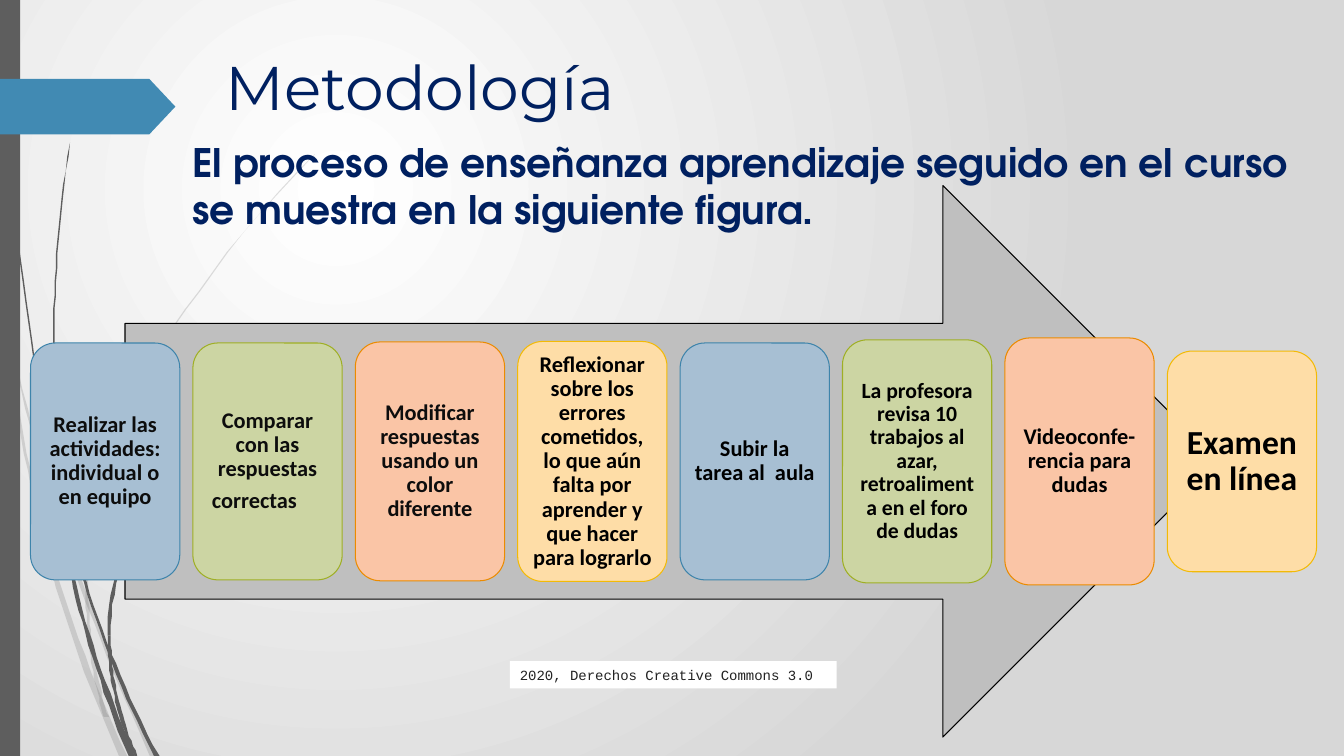
import pptx
import pptx.dml.color
import pptx.enum.shapes
import pptx.enum.text
import pptx.oxml
import pptx.oxml.ns
import pptx.util

Pt = pptx.util.Pt
qn = pptx.oxml.ns.qn
MSO_SHAPE = pptx.enum.shapes.MSO_SHAPE
PP_ALIGN = pptx.enum.text.PP_ALIGN
MIDDLE = pptx.enum.text.MSO_ANCHOR.MIDDLE
colour = pptx.dml.color.RGBColor.from_string
A_NAMESPACE = pptx.oxml.ns.nsdecls("a")
SLIDE_WIDTH, SLIDE_HEIGHT = 960, 540
NAVY, GREY, WHITE, BLACK, SOFT_BLACK = "002060", "5E5E5E", "FFFFFF", "000000", "0D0D0D"


def paint(shape, fill, outline=None):
    shape.shadow.inherit = False
    shape.fill.solid()
    shape.fill.fore_color.rgb = colour(fill)
    if outline:
        shape.line.color.rgb = colour(outline)
        shape.line.width = Pt(0.75)
    else:
        shape.line.fill.background()


def write(shape, text, font, size, ink, bold=False, align=PP_ALIGN.LEFT, spacing=1, after=0):
    frame = shape.text_frame
    frame.word_wrap = True
    frame.text = text
    for paragraph in frame.paragraphs:
        paragraph.alignment = align
        paragraph.line_spacing = spacing
        paragraph.space_after = Pt(after)
        for run in paragraph.runs:
            run.font.name, run.font.size, run.font.bold = font, Pt(size), bold
            run.font.color.rgb = colour(ink)


presentation = pptx.Presentation()
presentation.slide_width, presentation.slide_height = Pt(SLIDE_WIDTH), Pt(SLIDE_HEIGHT)
slide = presentation.slides.add_slide(presentation.slide_layouts[6])
shapes = slide.shapes

# Background: light spot in the upper left, fading to grey
backdrop = slide.background.fill
backdrop.gradient()
for stop, tone in zip(backdrop.gradient_stops, (WHITE, "D7D7D7")):
    stop.color.rgb = colour(tone)
gradient = slide.background._cSld.find(".//" + qn("a:gradFill"))
gradient.replace(gradient.find(qn("a:lin")), pptx.oxml.parse_xml(
    f'<a:path {A_NAMESPACE} path="circle">'
    '<a:fillToRect l="50000" t="50000" r="100000" b="100000"/></a:path>'))

# Grass blades: tip, bend, root, width at tip, width at root
pale_blades = [
    ((0, 209), (32, 375), (109, 540), 1, 3.5),
    ((8, 252), (22, 396), (88, 540), 0.5, 6),
    ((225, 110), (58, 282), (62, 421), 0.4, 2.2),
    ((62, 421), (63, 472), (76, 512), 2.2, 3),
]
dark_blades = [
    ((2.5, 0), (4, 171), (41, 344), 0.5, 1.5),
    ((43, 340), (60, 442), (112, 540), 0.5, 3.6),
    ((41, 343), (48, 430), (94, 540), 0.5, 5),
    ((50, 102), (31, 220), (43, 340), 0.4, 1.5),
    ((188, 248), (76, 369), (78, 454), 0.4, 2.5),
    ((78, 454), (78, 497), (97, 540), 2.5, 2.5),
]
BLADE_STEPS = 24
for blades, opacity in ((pale_blades, 20), (dark_blades, 100)):
    for tip, bend, root, tip_width, root_width in blades:
        left_edge, right_edge = [], []
        for step_number in range(BLADE_STEPS + 1):
            # Quadratic curve from tip to root, widened evenly on both sides
            t = step_number / BLADE_STEPS
            x, y = [(1 - t) ** 2 * a + 2 * t * (1 - t) * b + t ** 2 * c
                    for a, b, c in zip(tip, bend, root)]
            half_width = (tip_width + (root_width - tip_width) * t) / 2
            left_edge.append((x - half_width, y))
            right_edge.append((x + half_width, y))
        start, *rest = left_edge + right_edge[::-1]
        builder = shapes.build_freeform(*start, scale=Pt(1))
        builder.add_line_segments(rest, close=True)
        blade = builder.convert_to_shape()
        paint(blade, GREY)
        if opacity < 100:
            blade._element.spPr.find(".//" + qn("a:srgbClr")).append(pptx.oxml.parse_xml(
                f'<a:alpha {A_NAMESPACE} val="{opacity * 1000}"/>'))

# Left band and the marker beside the title
band = shapes.add_shape(MSO_SHAPE.RECTANGLE, 0, 0, Pt(14.4), Pt(SLIDE_HEIGHT))
paint(band, GREY)
title_marker = shapes.add_shape(MSO_SHAPE.PENTAGON, 0, Pt(56.3), Pt(125.3), Pt(39.8))
title_marker.adjustments[0] = 0.47
paint(title_marker, "418AB3")

# Process arrow
process_arrow = shapes.add_shape(MSO_SHAPE.RIGHT_ARROW, Pt(89.3), Pt(132.5), Pt(781.2), Pt(394))
paint(process_arrow, "BFBFBF", BLACK)

# Steps: equal pitch, centred on one line, four colours in turn
STEP_LEFT, STEP_PITCH, STEP_WIDTH, STEP_MIDDLE = 21.8, 116, 106.6, 329.6
steps = [
    ("Realizar las actividades: individual o en equipo", 169.2, 16, SOFT_BLACK),
    ("Comparar con las respuestas\n correctas\t", 169.2, 16, SOFT_BLACK),
    ("Modificar respuestas usando un color diferente", 170.6, 16, SOFT_BLACK),
    ("Reflexionar sobre los errores cometidos, lo que aún falta por aprender y que hacer "
     "para lograrlo ", 171.4, 16, BLACK),
    ("Subir la tarea al  aula", 169.2, 16, BLACK),
    ("La profesora revisa 10 trabajos al azar, retroalimenta en el foro de dudas",
     173.6, 15.5, BLACK),
    ("Videoconfe-rencia para dudas", 176.4, 16, BLACK),
    ("Examen en línea", 157.6, 24, BLACK),
]
step_colours = [("A7BFD3", "3E84AB"), ("CCD5A3", "9FAF25"),
                ("FAC5A6", "EB8B00"), ("FEDDA7", "F3BA06")]
for index, (text, height, size, ink) in enumerate(steps):
    step = shapes.add_shape(MSO_SHAPE.ROUNDED_RECTANGLE, Pt(STEP_LEFT + STEP_PITCH * index),
                            Pt(STEP_MIDDLE - height / 2), Pt(STEP_WIDTH), Pt(height))
    paint(step, *step_colours[index % len(step_colours)])
    write(step, text, "Calibri", size, ink, True, PP_ALIGN.CENTER, 0.9, size * 0.35)
    frame = step.text_frame
    frame.vertical_anchor = MIDDLE
    inset = Pt(size * 0.3)
    frame.margin_left = frame.margin_right = frame.margin_top = frame.margin_bottom = inset
    # Tab stops grow with the text size
    for paragraph in frame.paragraphs:
        paragraph._p.get_or_add_pPr().set("defTabSz", str(Pt(size * 3.5)))

# Title and introduction
title = shapes.add_textbox(Pt(154), Pt(18), Pt(353.5), Pt(92.9))
write(title, "Metodología", "Montserrat", 44, NAVY, spacing=0.9, after=6)
title.text_frame.vertical_anchor = MIDDLE

introduction = shapes.add_textbox(Pt(130.3), Pt(95), Pt(829.5), Pt(74.9))
write(introduction, "El proceso de enseñanza aprendizaje seguido en el curso se muestra "
      "en la siguiente figura.", "TeX Gyre Adventor", 28, NAVY, True)

# Licence note
licence = shapes.add_shape(MSO_SHAPE.RECTANGLE, Pt(364.3), Pt(472.3), Pt(233.3), Pt(19.4))
paint(licence, WHITE)
write(licence, "2020, Derechos Creative Commons 3.0", "Courier New", 10, "222222")
licence.text_frame.vertical_anchor = MIDDLE

presentation.save("out.pptx")
